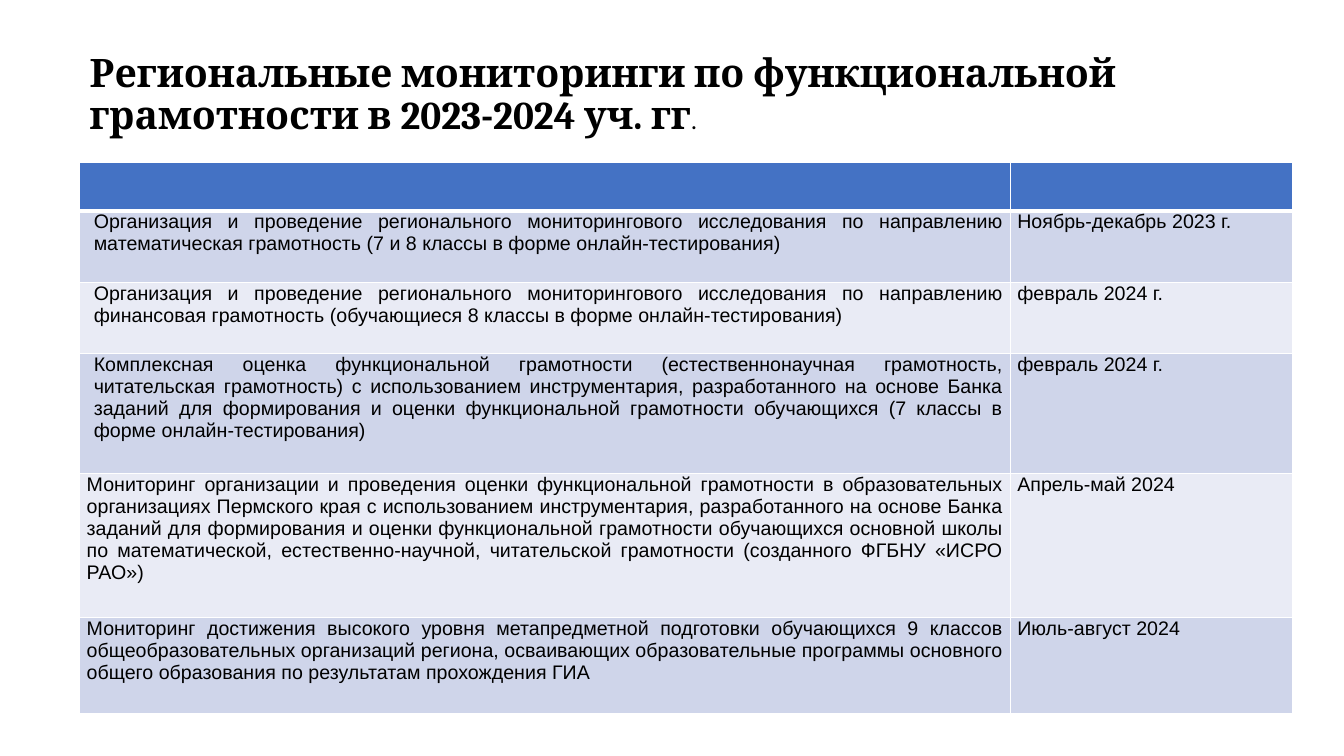
from lxml import etree
from pptx import Presentation
from pptx import util as u
from pptx.dml import color
from pptx.enum import text
from pptx.oxml import ns

BLACK, WHITE, HEADER = "000000", "FFFFFF", "4472C4"
BANDS = ["CFD5EA", "E9EBF5"]
COLUMN_WIDTHS = [9.23, 2.8]
ROW_HEIGHTS = [0.48, 0.71, 0.71, 1.19, 1.43, 0.95]
INDENT = 0.07
MONITORINGS = [
    ("Организация и проведение регионального мониторингового исследования по направлению "
     "математическая грамотность (7 и 8 классы в форме онлайн-тестирования)",
     "Ноябрь-декабрь 2023 г.", INDENT),
    ("Организация и проведение регионального мониторингового исследования по направлению "
     "финансовая грамотность (обучающиеся 8 классы в форме онлайн-тестирования)",
     "февраль 2024 г.", INDENT),
    ("Комплексная оценка функциональной грамотности (естественнонаучная грамотность, "
     "читательская грамотность) с использованием инструментария, разработанного на основе "
     "Банка заданий для формирования и оценки функциональной грамотности обучающихся "
     "(7 классы в форме онлайн-тестирования)",
     "февраль 2024 г.", INDENT),
    ("Мониторинг организации и проведения оценки функциональной грамотности в "
     "образовательных организациях Пермского края с использованием инструментария, "
     "разработанного на основе Банка заданий для формирования и оценки функциональной "
     "грамотности обучающихся основной школы по математической, естественно-научной, "
     "читательской грамотности (созданного ФГБНУ «ИСРО РАО»)",
     "Апрель-май 2024", 0),
    ("Мониторинг достижения высокого уровня метапредметной подготовки обучающихся 9 классов "
     "общеобразовательных организаций региона, осваивающих образовательные программы "
     "основного общего образования по результатам прохождения ГИА",
     "Июль-август 2024", 0),
]


def rgb(value):
    return color.RGBColor.from_string(value)


def add_text(para, words, size=14, font="Arial", bold=False, fill=BLACK,
             align=text.PP_ALIGN.LEFT, spacing=1.0, indent=0):
    para.alignment = align
    para.line_spacing = spacing
    if indent:
        properties = para._p.get_or_add_pPr()
        properties.set("marL", str(u.Inches(indent)))
        properties.set("indent", "0")
    span = para.add_run()
    span.text = words
    span.font.size = u.Pt(size)
    span.font.name = font
    span.font.bold = bold
    span.font.color.rgb = rgb(fill)


def style_cell(cell, fill, bottom=1):
    properties = cell._tc.get_or_add_tcPr()
    for side, width in (("L", 1), ("R", 1), ("T", 1), ("B", bottom)):
        line = etree.SubElement(properties, ns.qn(f"a:ln{side}"), w=str(u.Pt(width)))
        paint = etree.SubElement(line, ns.qn("a:solidFill"))
        etree.SubElement(paint, ns.qn("a:srgbClr"), val=WHITE)
    cell.fill.solid()
    cell.fill.fore_color.rgb = rgb(fill)


def add_title(page, left, top, width, height):
    box = page.shapes.add_textbox(*map(u.Inches, (left, top, width, height)))
    frame = box.text_frame
    frame.word_wrap = True
    frame.auto_size = text.MSO_AUTO_SIZE.SHAPE_TO_FIT_TEXT
    para = frame.paragraphs[0]
    add_text(para, "Региональные мониторинги по функциональной грамотности в 2023-2024 уч. гг",
             size=28, font="Cambria", bold=True, spacing=0.9)
    add_text(para, ".", size=18, font="Calibri", spacing=0.9)


def add_schedule(page, left, top, width, height):
    table = page.shapes.add_table(len(ROW_HEIGHTS), len(COLUMN_WIDTHS),
                                  *map(u.Inches, (left, top, width, height))).table
    for column, size in zip(table.columns, COLUMN_WIDTHS):
        column.width = u.Inches(size)
    for row, size in zip(table.rows, ROW_HEIGHTS):
        row.height = u.Inches(size)
    for cell in table.rows[0].cells:
        style_cell(cell, HEADER, bottom=3)
    for number, (task, period, indent) in enumerate(MONITORINGS):
        cells = table.rows[number + 1].cells
        formats = [dict(align=text.PP_ALIGN.JUSTIFY, indent=indent), {}]
        for cell, words, options in zip(cells, (task, period), formats):
            style_cell(cell, BANDS[number % 2])
            cell.margin_left = cell.margin_right = u.Inches(0.07)
            cell.margin_top = cell.margin_bottom = 0
            add_text(cell.text_frame.paragraphs[0], words, **options)


def main():
    deck = Presentation()
    deck.slide_width, deck.slide_height = u.Inches(13.33), u.Inches(7.5)
    page = deck.slides.add_slide(deck.slide_layouts[6])
    add_schedule(page, 0.79, 1.61, sum(COLUMN_WIDTHS), sum(ROW_HEIGHTS))
    add_title(page, 0.79, 0.48, sum(COLUMN_WIDTHS), 1.04)
    deck.save("out.pptx")


if __name__ == "__main__":
    main()
